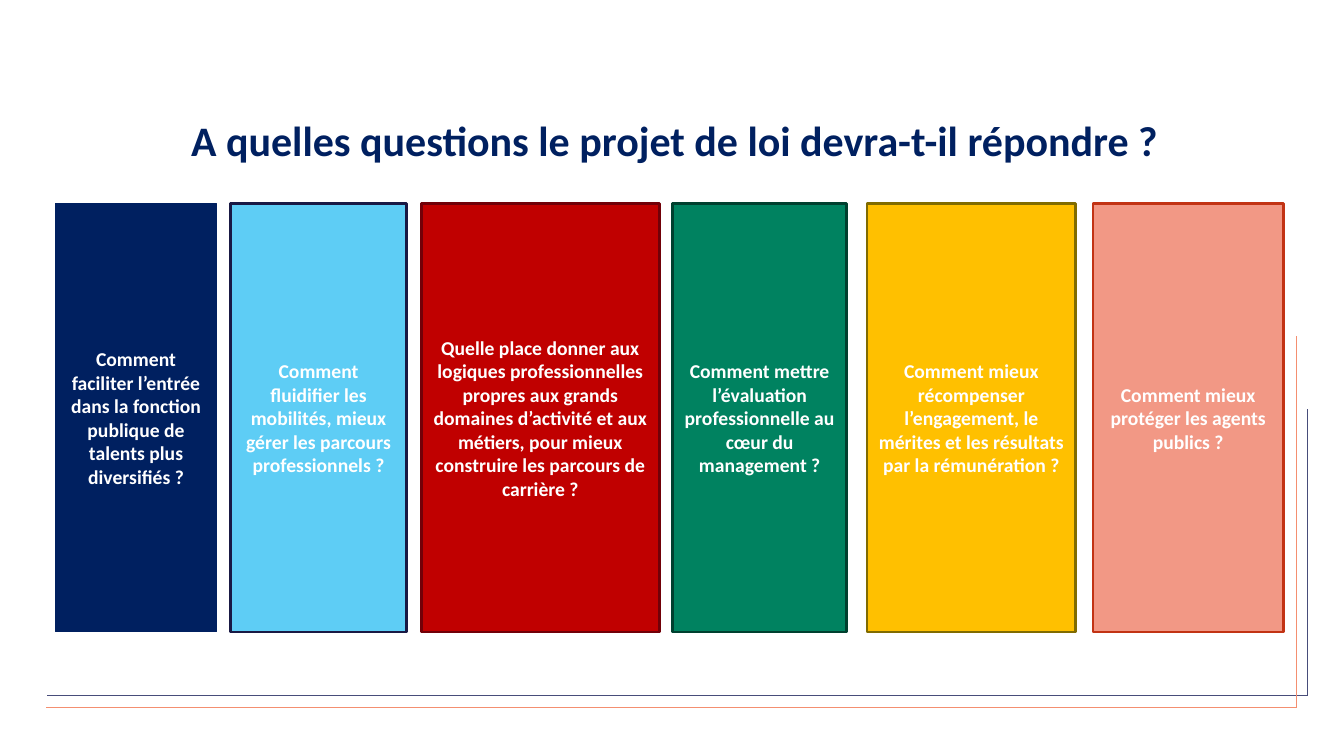
import pptx
import pptx.dml.color
import pptx.enum.shapes
import pptx.enum.text
import pptx.oxml.ns
import pptx.util
from lxml import etree

Inches = pptx.util.Inches
Pt = pptx.util.Pt
RGBColor = pptx.dml.color.RGBColor
qn = pptx.oxml.ns.qn

WHITE = RGBColor(0xFF, 0xFF, 0xFF)
NAVY = RGBColor(0x00, 0x20, 0x60)
SLATE = RGBColor(0x48, 0x4D, 0x7A)
CORAL = RGBColor(0xF4, 0x8F, 0x70)
SKY = RGBColor(0x00, 0xB0, 0xF0)
INDIGO = RGBColor(0x19, 0x19, 0x44)
RED = RGBColor(0xC0, 0x00, 0x00)
DARK_RED = RGBColor(0x71, 0x00, 0x08)
GREEN = RGBColor(0x00, 0x82, 0x60)
DARK_GREEN = RGBColor(0x00, 0x40, 0x2F)
GOLD = RGBColor(0xFF, 0xC0, 0x00)
OLIVE = RGBColor(0x80, 0x6B, 0x00)
SALMON = RGBColor(0xF2, 0x98, 0x85)
RUST = RGBColor(0xC2, 0x33, 0x14)

PANEL_TOP, PANEL_HEIGHT = 2.02, 4.25

# left, width, fill, opacity in percent, line, line width, question
PANELS = [
    (0.55, 1.6, NAVY, 100, NAVY, 0.75,
     "Comment faciliter l’entrée dans la fonction publique de talents plus diversifiés ?"),
    (2.29, 1.74, SKY, 63, INDIGO, 2,
     "Comment fluidifier les mobilités, mieux gérer les parcours professionnels ?"),
    (4.18, 2.36, RED, 100, DARK_RED, 2,
     "Quelle place donner aux logiques professionnelles propres aux grands domaines "
     "d’activité et aux métiers, pour mieux construire les parcours de carrière ?"),
    (6.67, 1.73, GREEN, 100, DARK_GREEN, 2,
     "Comment mettre l’évaluation professionnelle au cœur du management ?"),
    (8.6, 2.07, GOLD, 100, OLIVE, 2,
     "Comment mieux récompenser l’engagement, le mérites et les résultats par la rémunération ?"),
    (10.84, 1.89, SALMON, 100, RUST, 2,
     "Comment mieux protéger les agents publics ?"),
]

# colour, left end, corner x, corner y, top end
FRAME_CORNERS = [
    (SLATE, 0.47, 12.97, 6.9, 4.06),
    (CORAL, 0.46, 12.86, 7.02, 3.33),
]


def write_text(shape, text, *, size, color, inset, indent=0):
    """Fill a shape with one centred bold paragraph."""
    frame = shape.text_frame
    frame.word_wrap = True
    frame.auto_size = pptx.enum.text.MSO_AUTO_SIZE.NONE
    frame.vertical_anchor = pptx.enum.text.MSO_ANCHOR.MIDDLE
    frame.margin_left = frame.margin_right = Inches(inset)
    frame.margin_top = frame.margin_bottom = Inches(0.05)
    paragraph = frame.paragraphs[0]
    paragraph.alignment = pptx.enum.text.PP_ALIGN.CENTER
    if indent:
        paragraph._p.get_or_add_pPr().set("indent", str(Inches(indent)))
    run = paragraph.add_run()
    run.text = text
    run.font.name = "Calibri"
    run.font.size = Pt(size)
    run.font.bold = True
    run.font.color.rgb = color


class SlideBuilder:
    def __init__(self, slide):
        self.slide = slide
        self.title_size = 30
        self.panel_size = 14

    def title(self, text, left, top, width, height):
        shape = self.slide.shapes.title
        shape.left, shape.top = Inches(left), Inches(top)
        shape.width, shape.height = Inches(width), Inches(height)
        write_text(shape, text, size=self.title_size, color=NAVY, inset=0.05, indent=0.14)

    def line(self, start, end, color):
        connector = self.slide.shapes.add_connector(
            pptx.enum.shapes.MSO_CONNECTOR.STRAIGHT,
            *(Inches(value) for value in (*start, *end)))
        connector.line.color.rgb = color
        connector.line.width = Pt(1)
        etree.SubElement(connector._element.spPr, qn("a:effectLst"))

    def panel(self, left, width, fill, opacity, line, line_width, question):
        shape = self.slide.shapes.add_shape(
            pptx.enum.shapes.MSO_SHAPE.RECTANGLE,
            Inches(left), Inches(PANEL_TOP), Inches(width), Inches(PANEL_HEIGHT))
        shape.shadow.inherit = False
        shape.fill.solid()
        shape.fill.fore_color.rgb = fill
        if opacity < 100:
            color = shape._element.spPr.find(qn("a:solidFill")).find(qn("a:srgbClr"))
            etree.SubElement(color, qn("a:alpha")).set("val", str(opacity * 1000))
        shape.line.color.rgb = line
        shape.line.width = Pt(line_width)
        write_text(shape, question, size=self.panel_size, color=WHITE, inset=0.11)


def main():
    presentation = pptx.Presentation()
    presentation.slide_width = Inches(13.33)
    presentation.slide_height = Inches(7.5)
    title_only = presentation.slide_layouts[5]
    builder = SlideBuilder(presentation.slides.add_slide(title_only))

    # Corner lines
    for color, left, corner_x, corner_y, top in FRAME_CORNERS:
        builder.line((left, corner_y), (corner_x, corner_y), color)
        builder.line((corner_x, corner_y), (corner_x, top), color)

    # Title
    builder.title("A quelles questions le projet de loi devra-t-il répondre ?",
                  0.25, 1.09, 12.75, 0.6)

    # Question panels
    for panel in PANELS:
        builder.panel(*panel)

    presentation.save("out.pptx")


if __name__ == "__main__":
    main()
